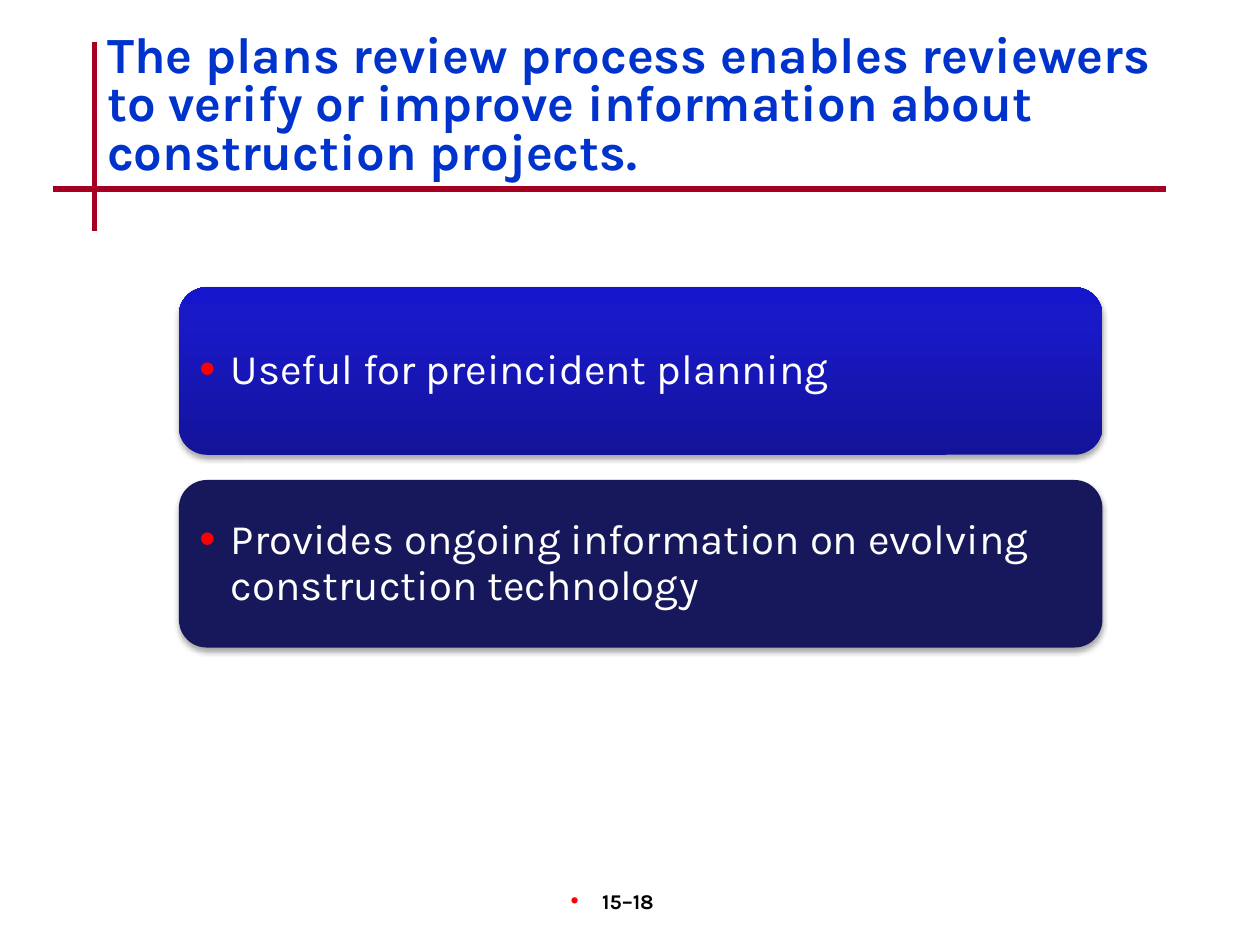
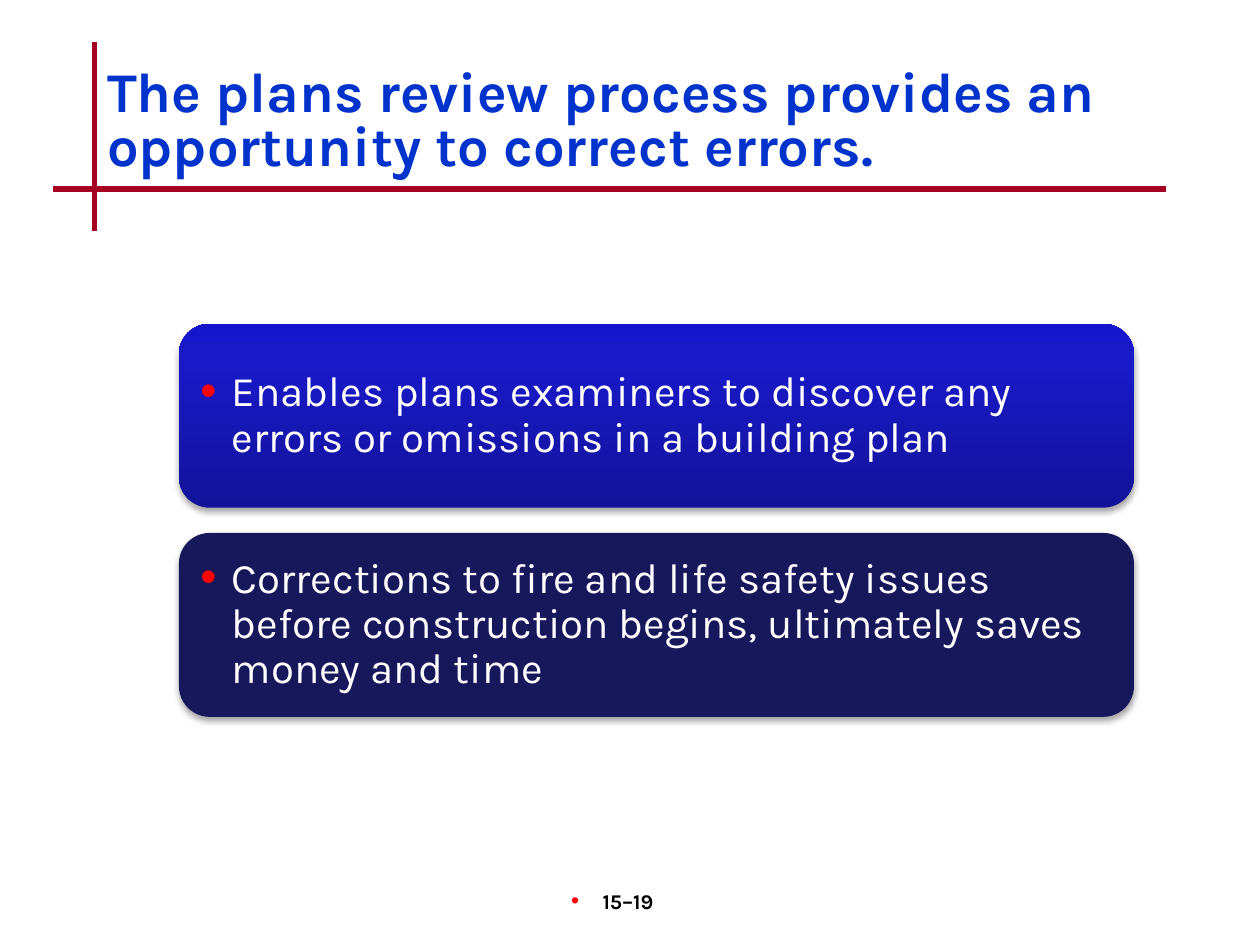
from dataclasses import dataclass

from lxml import etree
from pptx import Presentation
from pptx.dml.color import RGBColor
from pptx.enum import shapes, text
from pptx.oxml import parse_xml
from pptx.oxml.ns import nsdecls, qn
from pptx.util import Inches, Pt


@dataclass(frozen=True)
class Theme:
    font: str = "Karla"
    title: str = "0033CC"
    rule: str = "A50021"
    bullet: str = "FF0000"
    panel_text: str = "FFFFFF"
    footer: str = "000000"
    navy: str = "17175C"
    blues: tuple = ((0, "13139A"), (80, "1919C8"), (100, "1515CC"))
    body_size: int = 24
    footer_size: int = 12


T = Theme()

# Cross of rules behind the title: x1, y1, x2, y2
RULES = [(0.75, 0.33, 0.75, 1.83), (0.42, 1.5, 9.25, 1.5)]
PANEL_LEFT, PANEL_GAP = 1.42, 0.2
INDENT = 0.25

SLIDES = [
    dict(
        title="The plans review process enables reviewers to verify or improve "
              "information about construction projects.",
        title_top=0.22, title_size=29, number="15–18",
        panel_top=2.28, panel_width=7.33, panel_height=1.33,
        points=["Useful for preincident planning",
                "Provides ongoing information on evolving construction technology"],
    ),
    dict(
        title="The plans review process provides an opportunity to correct errors.",
        title_top=0.5, title_size=32, number="15–19",
        panel_top=2.57, panel_width=7.58, panel_height=1.46,
        points=["Enables plans examiners to discover any errors or omissions "
                "in a building plan",
                "Corrections to fire and life safety issues before construction "
                "begins, ultimately saves money and time"],
    ),
]


def box(left, top, width, height):
    return [Inches(v) for v in (left, top, width, height)]


def add_bullet(p):
    pPr = p._p.get_or_add_pPr()
    pPr.set("marL", str(Inches(INDENT)))
    pPr.set("indent", str(-Inches(INDENT)))
    color = etree.SubElement(pPr, qn("a:buClr"))
    etree.SubElement(color, qn("a:srgbClr"), val=T.bullet)
    etree.SubElement(pPr, qn("a:buSzPct"), val="110000")
    etree.SubElement(pPr, qn("a:buFont"), typeface="Arial")
    etree.SubElement(pPr, qn("a:buChar"), char="•")


def set_text(sp, content, size, color, bold=False, align=text.PP_ALIGN.LEFT,
             anchor=text.MSO_ANCHOR.TOP, spacing=1.0, bullet=False):
    tf = sp.text_frame
    tf.word_wrap = True
    tf.auto_size = text.MSO_AUTO_SIZE.NONE
    tf.vertical_anchor = anchor
    p = tf.paragraphs[0]
    if bullet:
        add_bullet(p)
    p.alignment = align
    p.line_spacing = spacing
    r = p.add_run()
    r.text = content
    r.font.name = T.font
    r.font.size = Pt(size)
    r.font.bold = bold
    r.font.color.rgb = RGBColor.from_string(color)
    return tf


def add_rule(s, x1, y1, x2, y2):
    line = s.shapes.add_connector(shapes.MSO_CONNECTOR.STRAIGHT, *box(x1, y1, x2, y2))
    line.line.color.rgb = RGBColor.from_string(T.rule)
    line.line.width = Pt(3)
    etree.SubElement(line._element.spPr, qn("a:effectLst"))


def set_title(s, content, top, size):
    sp = s.shapes.title
    sp.left, sp.top, sp.width, sp.height = box(0.75, top, 8.5, 1)
    set_text(sp, content, size, T.title, bold=True, spacing=0.8)


def add_page_number(s, number):
    sp = s.shapes.add_textbox(*box(3.92, 7, 2.08, 0.5))
    tf = set_text(sp, number, T.footer_size, T.footer, bold=True,
                  align=text.PP_ALIGN.CENTER, bullet=True)
    tf.margin_right = Inches(0.3)  # balances the bullet indent


def fill_gradient(sp, stops):
    gs = "".join(f'<a:gs pos="{pos * 1000}"><a:srgbClr val="{color}"/></a:gs>'
                 for pos, color in stops)
    grad = parse_xml(f'<a:gradFill {nsdecls("a")} rotWithShape="1"><a:gsLst>{gs}</a:gsLst>'
                     '<a:lin ang="16200000" scaled="0"/></a:gradFill>')
    sp._element.spPr.find(qn("a:prstGeom")).addnext(grad)


def add_shadow(sp):
    sp.shadow.inherit = False
    effects = sp._element.spPr.find(qn("a:effectLst"))
    effects.append(parse_xml(
        f'<a:outerShdw {nsdecls("a")} blurRad="{Pt(3.1)}" dist="{Pt(1.8)}" dir="5400000" '
        'rotWithShape="0"><a:srgbClr val="000000"><a:alpha val="35000"/></a:srgbClr>'
        '</a:outerShdw>'))


def add_panel(s, content, top, width, height, gradient):
    sp = s.shapes.add_shape(shapes.MSO_SHAPE.ROUNDED_RECTANGLE,
                            *box(PANEL_LEFT, top, width, height))
    if gradient:
        fill_gradient(sp, T.blues)
    else:
        sp.fill.solid()
        sp.fill.fore_color.rgb = RGBColor.from_string(T.navy)
    sp.line.fill.background()
    add_shadow(sp)
    tf = set_text(sp, content, T.body_size, T.panel_text, spacing=0.9,
                  anchor=text.MSO_ANCHOR.MIDDLE, bullet=True)
    tf.margin_left = tf.margin_right = tf.margin_top = tf.margin_bottom = Inches(0.1)


def build_slide(prs, data):
    s = prs.slides.add_slide(prs.slide_layouts[5])
    # Shared frame
    for rule in RULES:
        add_rule(s, *rule)
    add_page_number(s, data["number"])
    set_title(s, data["title"], data["title_top"], data["title_size"])
    # Stacked panels, the first one with the gradient
    height = data["panel_height"]
    for i, point in enumerate(data["points"]):
        top = data["panel_top"] + i * (height + PANEL_GAP)
        add_panel(s, point, top, data["panel_width"], height, gradient=i == 0)


def main():
    prs = Presentation()
    prs.slide_width, prs.slide_height = Inches(10), Inches(7.5)
    for data in SLIDES:
        build_slide(prs, data)
    prs.save("out.pptx")


if __name__ == "__main__":
    main()
